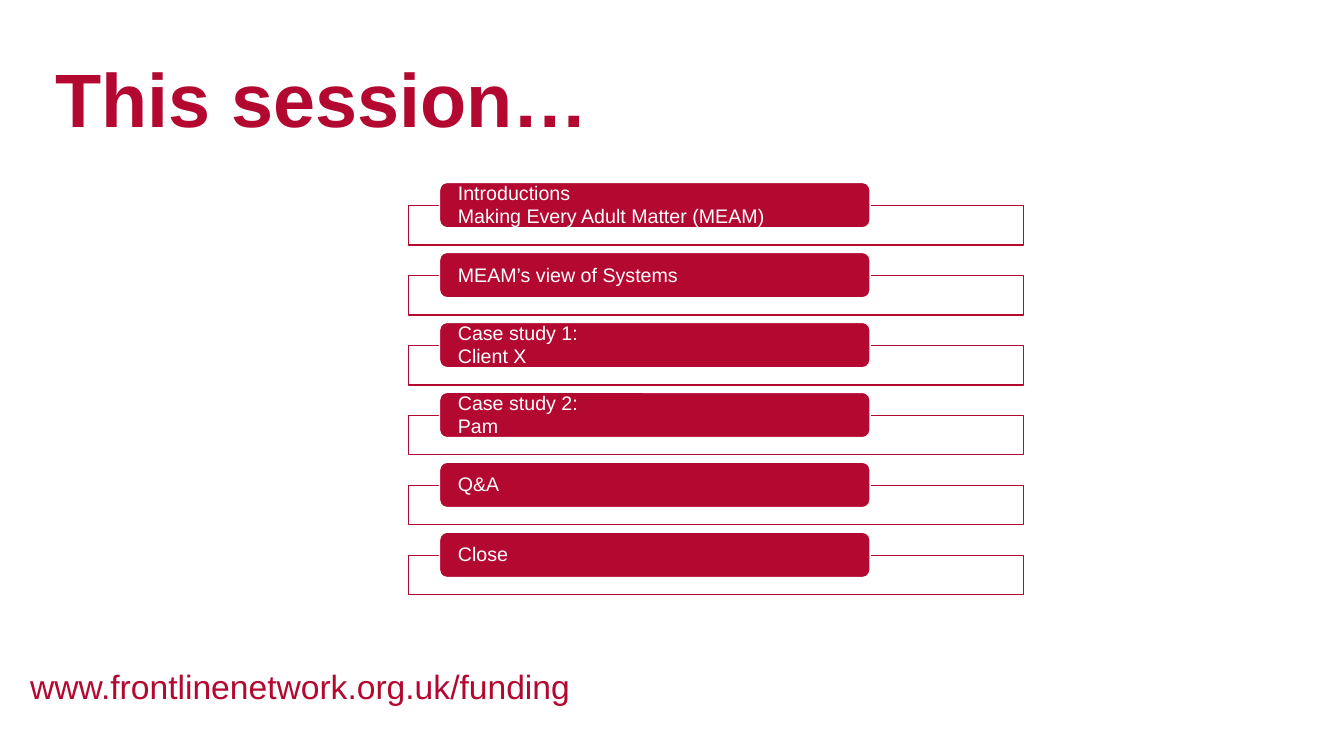
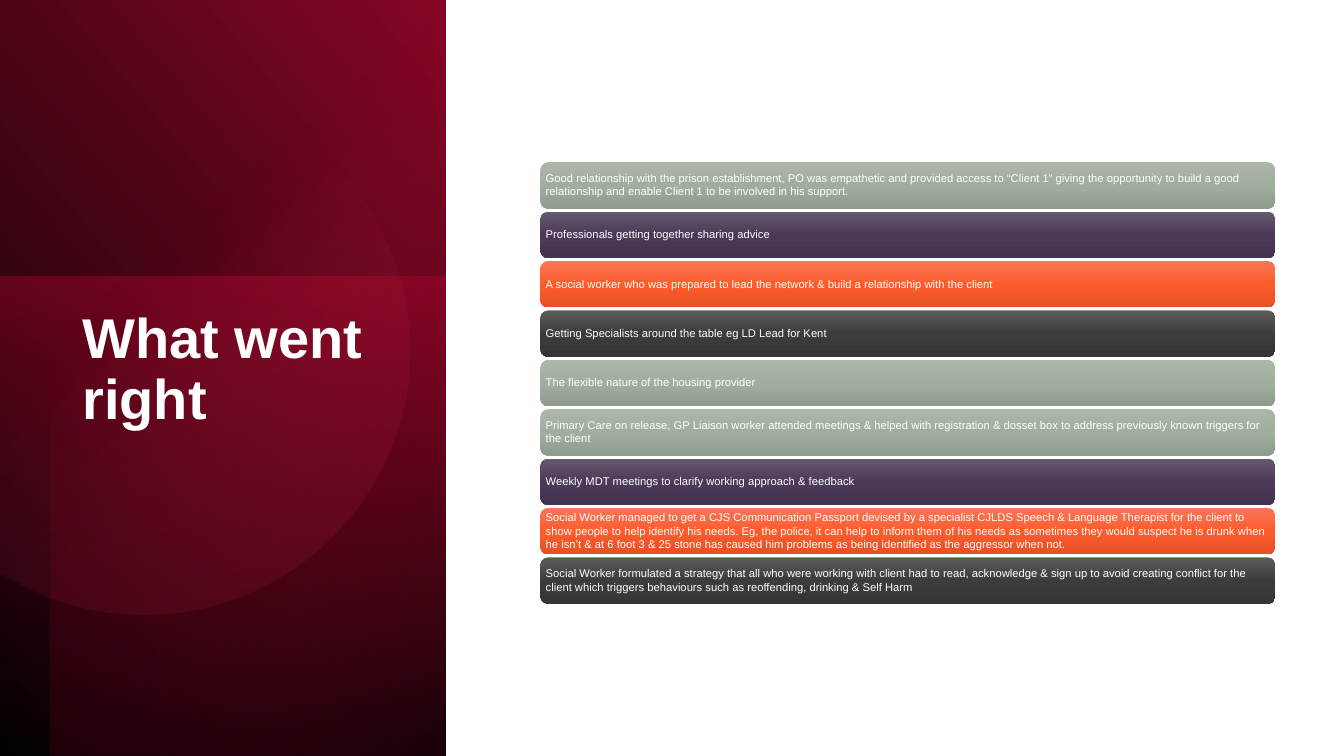
"""Build two slides: a session agenda and a list of what went right."""
from dataclasses import dataclass
from math import asin, cos, pi, sin

from pptx import Presentation
from pptx.dml.color import RGBColor
from pptx.enum.shapes import MSO_SHAPE as Preset
from pptx.enum.text import MSO_ANCHOR as Anchor, PP_ALIGN as Align
from pptx.oxml import parse_xml
from pptx.oxml.ns import nsdecls, qn
from pptx.util import Inches, Pt


@dataclass(frozen=True)
class Theme:
    font: str = "Arial"
    red: str = "B30931"
    deep_red: str = "860725"
    dark_red: str = "5A0418"
    pink: str = "F64770"
    black: str = "000000"
    white: str = "FFFFFF"
    title_size: int = 54
    side_title_size: int = 40
    footer_size: int = 24
    agenda_size: int = 14
    row_size: int = 8
    title_spacing: float = 0.9
    row_spacing: float = 0.98


THEME = Theme()

AGENDA_TITLE = "This session…"
FOOTER = "www.frontlinenetwork.org.uk/funding"
AGENDA = [
    "Introductions\vMaking Every Adult Matter (MEAM)",
    "MEAM’s view of Systems",
    "Case study 1:\vClient X",
    "Case study 2:\vPam",
    "Q&A",
    "Close",
]

SUCCESS_TITLE = "What went right"
ROW_COLOURS = {
    "sage": ("ACB7A9", "A0AF9D", "8E9C8B"),
    "purple": ("655A6F", "4B3959", "433151"),
    "orange": ("F87659", "FF5C2C", "E55025"),
    "charcoal": ("5C5C5B", "3C3C3B", "353534"),
}
SUCCESSES = [
    ("sage", "Good relationship with the prison establishment, PO was empathetic and "
             "provided access to “Client 1” giving the opportunity to build a good "
             "relationship and enable Client 1 to be involved in his support."),
    ("purple", "Professionals getting together sharing advice"),
    ("orange", "A social worker who was prepared to lead the network & build a "
               "relationship with the client"),
    ("charcoal", "Getting Specialists around the table eg LD Lead for Kent"),
    ("sage", "The flexible nature of the housing provider"),
    ("sage", "Primary Care on release, GP Liaison worker attended meetings & helped "
             "with registration & dosset box to address previously known triggers for "
             "the client"),
    ("purple", "Weekly MDT meetings to clarify working approach & feedback"),
    ("orange", "Social Worker managed to get a CJS Communication Passport devised by a "
               "specialist CJLDS Speech & Language Therapist for the client to show "
               "people to help identify his needs. Eg, the police, it can help to inform "
               "them of his needs as sometimes they would suspect he is drunk when he "
               "isn’t & at 6 foot 3 & 25 stone has caused him problems as being "
               "identified as the aggressor when not."),
    ("charcoal", "Social Worker formulated a strategy that all who were working with "
                 "client had to read, acknowledge & sign up to avoid creating conflict "
                 "for the client which triggers behaviours such as reoffending, drinking "
                 "& Self Harm"),
]

PANELS = [
    ((0, 0, 4.42, 7.5), 320, [(0, THEME.black, 100), (100, THEME.deep_red, 100)]),
    ((0, 2.74, 4.42, 4.76), 100, [(0, THEME.red, 50), (100, THEME.dark_red, 0)]),
    ((0.5, 0, 3.92, 7.5), 230, [(0, THEME.black, 59), (69, THEME.red, 0)]),
]
DISC_X, DISC_Y, DISC_RADIUS = 1.43, 3.47, 2.63
DISC_STOPS = [(39, THEME.pink, 0), (100, THEME.deep_red, 26)]


def rgb(colour):
    return RGBColor.from_string(colour)


def write(shape, text, size, colour, inset, bold=False, anchor=Anchor.TOP, spacing=1.0):
    frame = shape.text_frame
    frame.word_wrap = True
    frame.vertical_anchor = anchor
    frame.margin_left = frame.margin_right = Inches(inset[0])
    frame.margin_top = frame.margin_bottom = Inches(inset[1])
    para = frame.paragraphs[0]
    para.text = text
    para.alignment = Align.LEFT
    para.line_spacing = spacing
    font = para.font
    font.name, font.size, font.bold = THEME.font, Pt(size), bold
    font.color.rgb = rgb(colour)


def add_text(page, area, text, size, colour, **style):
    box = page.shapes.add_textbox(*map(Inches, area))
    write(box, text, size, colour, (0.1, 0.05), **style)


def add_title(page, area, text, size, colour, anchor):
    add_text(page, area, text, size, colour, bold=True, anchor=anchor,
             spacing=THEME.title_spacing)


def add_block(page, preset, area, fill=None, line=None):
    block = page.shapes.add_shape(preset, *map(Inches, area))
    block.shadow.inherit = False
    if fill:
        block.fill.solid()
        block.fill.fore_color.rgb = rgb(fill)
    if line:
        block.line.color.rgb = rgb(line)
        block.line.width = Pt(1)
    else:
        block.line.fill.background()
    return block


def fill_gradient(shape, stops, angle):
    marks = "".join(
        f'<a:gs pos="{place * 1000}"><a:srgbClr val="{colour}">'
        f'<a:alpha val="{opacity * 1000}"/></a:srgbClr></a:gs>'
        for place, colour, opacity in stops)
    gradient = parse_xml(
        f'<a:gradFill {nsdecls("a")} rotWithShape="1"><a:gsLst>{marks}</a:gsLst>'
        f'<a:lin ang="{angle * 60000}" scaled="0"/></a:gradFill>')
    shape.fill.background()
    properties = shape._element.spPr
    properties.replace(properties.find(qn("a:noFill")), gradient)


def row_tops(first, last, count):
    return [first + (last - first) * index / (count - 1) for index in range(count)]


def add_disc(page, steps=120):
    cut = pi / 2 + asin(DISC_X / DISC_RADIUS)
    angles = [cut * (2 * step / steps - 1) for step in range(steps + 1)]
    points = [(Inches(max(0, DISC_X + DISC_RADIUS * cos(angle))),
               Inches(DISC_Y + DISC_RADIUS * sin(angle))) for angle in angles]
    builder = page.shapes.build_freeform(*points[0])
    builder.add_line_segments(points[1:], close=True)
    disc = builder.convert_to_shape()
    disc.shadow.inherit = False
    disc.line.fill.background()
    fill_gradient(disc, DISC_STOPS, 52)


def build_agenda(page):
    add_text(page, (0.2, 6.56, 6.38, 0.5), FOOTER, THEME.footer_size, THEME.red)
    add_title(page, (0.45, 0.5, 12.44, 1.04), AGENDA_TITLE, THEME.title_size,
              THEME.red, Anchor.MIDDLE)
    for top, text in zip(row_tops(1.81, 5.28, len(AGENDA)), AGENDA):
        add_block(page, Preset.RECTANGLE, (4.05, top + 0.23, 6.1, 0.39),
                  THEME.white, THEME.red)
        label = add_block(page, Preset.ROUNDED_RECTANGLE, (4.36, top, 4.27, 0.45),
                          THEME.red, THEME.white)
        write(label, text, THEME.agenda_size, THEME.white, (0.16, 0),
              anchor=Anchor.MIDDLE, spacing=THEME.row_spacing)


def build_successes(page):
    for area, angle, stops in PANELS:
        fill_gradient(add_block(page, Preset.RECTANGLE, area), stops, angle)
    add_disc(page)
    add_title(page, (0.72, 3.03, 3.15, 3.36), SUCCESS_TITLE, THEME.side_title_size,
              THEME.white, Anchor.TOP)
    for top, (name, text) in zip(row_tops(1.61, 5.53, len(SUCCESSES)), SUCCESSES):
        row = add_block(page, Preset.ROUNDED_RECTANGLE, (5.36, top, 7.29, 0.46))
        stops = [(place, colour, 100)
                 for place, colour in zip((0, 50, 100), ROW_COLOURS[name])]
        fill_gradient(row, stops, 90)
        write(row, text, THEME.row_size, THEME.white, (0.03, 0.03),
              anchor=Anchor.MIDDLE, spacing=THEME.row_spacing)


def main():
    deck = Presentation()
    deck.slide_width, deck.slide_height = Inches(13.33), Inches(7.5)
    for build in (build_agenda, build_successes):
        build(deck.slides.add_slide(deck.slide_layouts[6]))
    deck.save("out.pptx")


if __name__ == "__main__":
    main()
